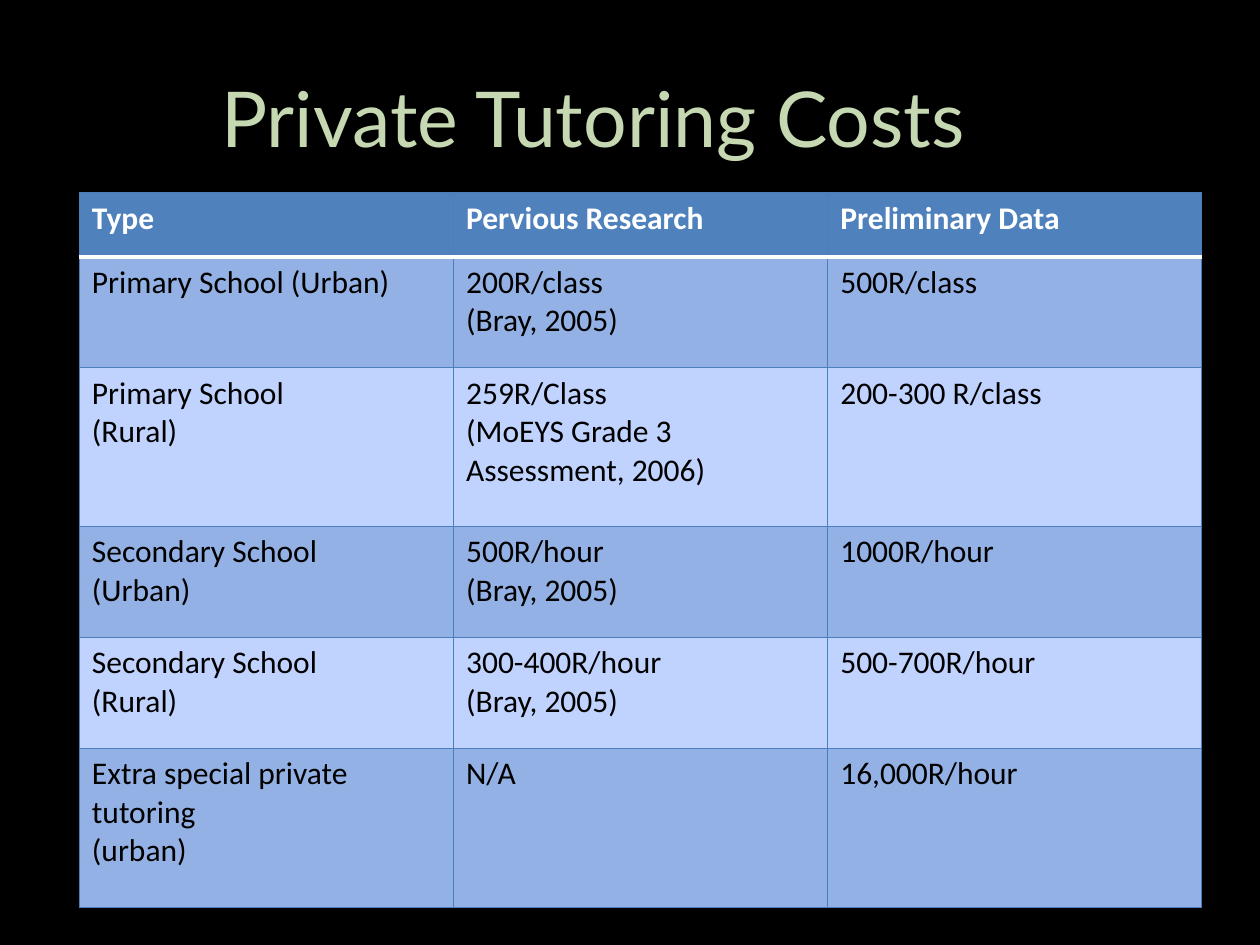
from pptx import Presentation
from pptx.util import Inches, Pt
from pptx.dml.color import RGBColor
from pptx.enum.text import PP_ALIGN as Align, MSO_ANCHOR as Anchor
from lxml.etree import SubElement as Sub
from pptx.oxml.ns import qn

TITLE = "Private Tutoring Costs"
ROWS = [
    ("Type", "Pervious Research", "Preliminary Data"),
    ("Primary School (Urban)", "200R/class\n(Bray, 2005)", "500R/class"),
    ("Primary School\n(Rural)", "259R/Class\n(MoEYS Grade 3 Assessment, 2006)",
     "200-300 R/class"),
    ("Secondary School\n(Urban)", "500R/hour\n(Bray, 2005)", "1000R/hour"),
    ("Secondary School\n(Rural)", "300-400R/hour\n(Bray, 2005)", "500-700R/hour"),
    ("Extra special private tutoring\n(urban)", "N/A", "16,000R/hour"),
]
HIGH = [0.51, 0.88, 1.26, 0.88, 0.88, 1.26]
COL = 2.97
HEAD, DARK, LIGHT, EDGE = "4F81BD", "93B1E4", "C0D3FF", "4B7EBC"


def color(code):
    return RGBColor.from_string(code)


def write(frame, text, font="Calibri", size=18, ink="000000", bold=False,
          align=Align.LEFT):
    frame.text = text
    for para in frame.paragraphs:
        para.alignment = align
        for run in para.runs:
            run.font.name, run.font.size, run.font.bold = font, Pt(size), bold
            run.font.color.rgb = color(ink)


def border(cell, side, code, width):
    line = Sub(cell._tc.get_or_add_tcPr(), qn("a:ln" + side), w=str(Pt(width)))
    Sub(Sub(line, qn("a:solidFill")), qn("a:srgbClr"), val=code)


def main():
    deck = Presentation()
    deck.slide_width, deck.slide_height = Inches(10), Inches(7.5)
    slide = deck.slides.add_slide(deck.slide_layouts[5])
    back = slide.background.fill
    back.solid()
    back.fore_color.rgb = color("000000")

    title = slide.shapes.title
    title.left, title.top = Inches(0.33), Inches(0.3)
    title.width, title.height = Inches(8.76), Inches(1.25)
    title.text_frame.vertical_anchor = Anchor.MIDDLE
    write(title.text_frame, TITLE, font="Lato", size=44, ink="C5D8B2",
          align=Align.CENTER)

    count = len(ROWS[0])
    table = slide.shapes.add_table(
        len(ROWS), count, Inches(0.63), Inches(1.53),
        Inches(COL * count), Inches(sum(HIGH))).table
    for col in table.columns:
        col.width = Inches(COL)
    for r, (texts, high) in enumerate(zip(ROWS, HIGH)):
        table.rows[r].height = Inches(high)
        top = r == 0
        shade = HEAD if top else DARK if r % 2 else LIGHT
        for c, text in enumerate(texts):
            cell = table.cell(r, c)
            write(cell.text_frame, text, ink="FFFFFF" if top else "000000",
                  bold=top)
            for side in "LRTB":
                rule = (r, side) in ((0, "B"), (1, "T"))
                border(cell, side, *(("FFFFFF", 2) if rule else (EDGE, 0.75)))
            cell.fill.solid()
            cell.fill.fore_color.rgb = color(shade)

    deck.save("out.pptx")


if __name__ == "__main__":
    main()
